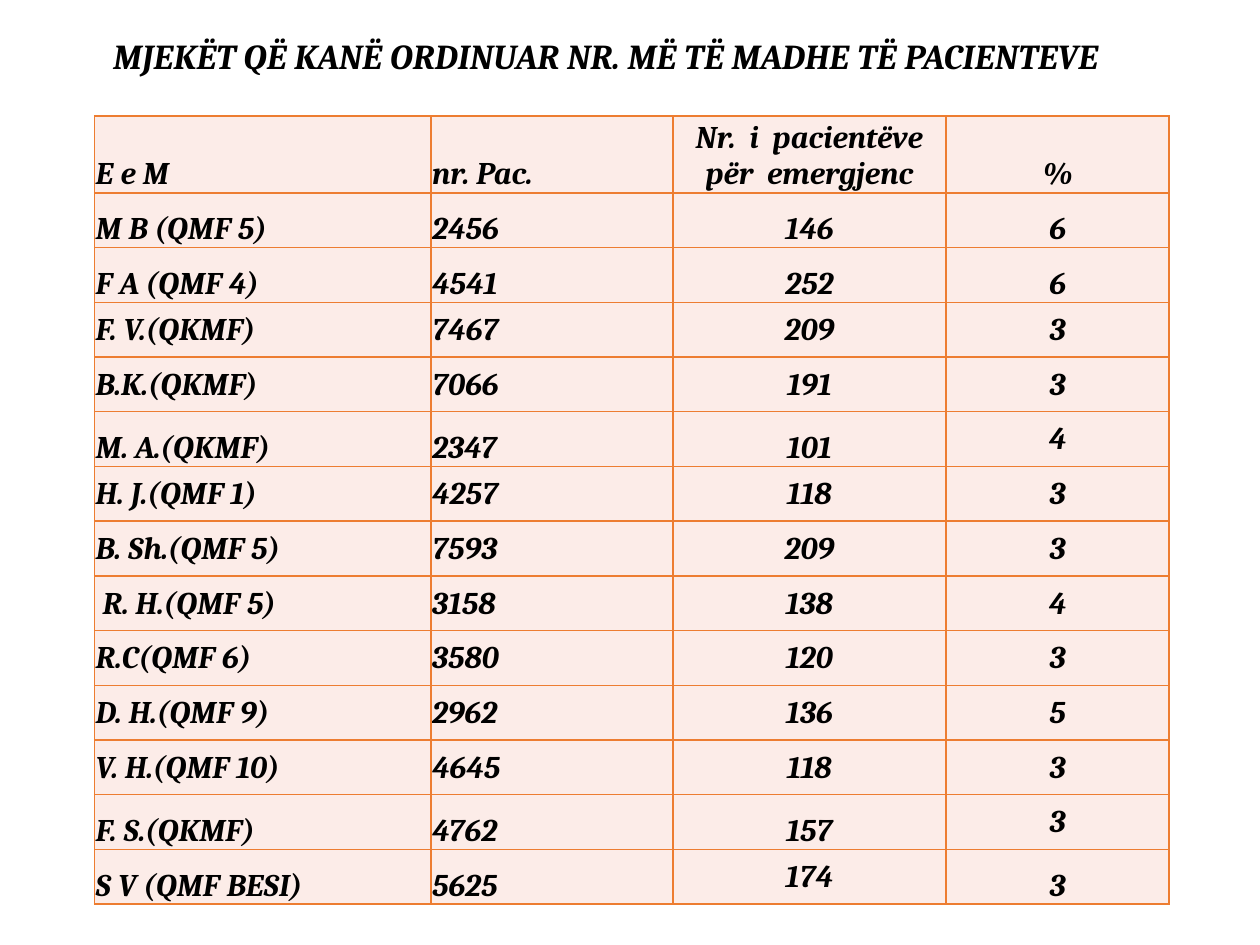
from typing import NamedTuple

from lxml.etree import SubElement
from pptx import Presentation
from pptx.dml.color import RGBColor
from pptx.enum.text import MSO_ANCHOR, PP_ALIGN
from pptx.oxml.ns import qn
from pptx.slide import Slide
from pptx.table import _Cell
from pptx.text.text import TextFrame
from pptx.util import Inches, Pt

FONT = "Cambria"
BLACK = RGBColor(0x00, 0x00, 0x00)
ORANGE = RGBColor(0xED, 0x7D, 0x31)
BLUSH = RGBColor(0xFC, 0xEC, 0xE8)

TITLE = "MJEKËT QË KANË ORDINUAR NR. MË TË MADHE TË PACIENTEVE"
COLUMN_WIDTHS = (2.67, 1.92, 2.17, 1.77)
COLUMN_ALIGNMENTS = (PP_ALIGN.LEFT, PP_ALIGN.LEFT, PP_ALIGN.CENTER, PP_ALIGN.CENTER)
TABLE_HEIGHT = 6.24
HEADER_HEIGHT = 0.59
ANCHORS = {"b": MSO_ANCHOR.BOTTOM, "m": MSO_ANCHOR.MIDDLE}


class Doctor(NamedTuple):
    """One doctor's figures, with one anchor letter per column."""

    name: str
    patients: str
    emergencies: str
    percent: str
    anchors: str = "mmmm"


HEADINGS = Doctor("E e M", "nr. Pac.", "Nr.  i  pacientëve për  emergjenc", "%", "bbbb")
DOCTORS = (
    Doctor("M B (QMF 5)", "2456", "146", "6", "bbbb"),
    Doctor("F A (QMF 4)", "4541", "252", "6", "bbbb"),
    Doctor("F. V.(QKMF)", "7467", "209", "3"),
    Doctor("B.K.(QKMF)", "7066", "191", "3"),
    Doctor("M. A.(QKMF)", "2347", "101", "4", "bbbm"),
    Doctor("H. J.(QMF 1)", "4257", "118", "3"),
    Doctor("B. Sh.(QMF 5)", "7593", "209", "3"),
    Doctor(" R. H.(QMF 5)", "3158", "138", "4"),
    Doctor("R.C(QMF 6)", "3580", "120", "3"),
    Doctor("D. H.(QMF 9)", "2962", "136", "5"),
    Doctor("V. H.(QMF 10)", "4645", "118", "3"),
    Doctor("F. S.(QKMF)", "4762", "157", "3", "bbbm"),
    Doctor("S V (QMF BESI)", "5625", "174", "3", "bbmb"),
)


def write(frame: TextFrame, text: str, size: int, alignment: PP_ALIGN) -> None:
    """Fill a text frame with one bold italic paragraph."""
    frame.text = text
    paragraph = frame.paragraphs[0]
    paragraph.alignment = alignment
    font = paragraph.runs[0].font
    font.name, font.size = FONT, Pt(size)
    font.bold = font.italic = True
    font.color.rgb = BLACK


def style_cell(cell: _Cell, anchor: MSO_ANCHOR) -> None:
    """Set the margins, borders and fill of a cell."""
    cell.vertical_anchor = anchor
    cell.margin_left = cell.margin_right = cell.margin_top = Inches(0.01)
    cell.margin_bottom = 0
    properties = cell._tc.get_or_add_tcPr()
    for side in ("a:lnL", "a:lnR", "a:lnT", "a:lnB"):
        border = SubElement(properties, qn(side), w=str(Pt(1)))
        border_fill = SubElement(border, qn("a:solidFill"))
        SubElement(border_fill, qn("a:srgbClr"), val=str(ORANGE))
    cell.fill.solid()
    cell.fill.fore_color.rgb = BLUSH


def add_title(slide: Slide) -> None:
    """Place the centred heading."""
    title = slide.shapes.add_textbox(Inches(0.5), Inches(0), Inches(8.62), Inches(0.92))
    frame = title.text_frame
    frame.word_wrap = True
    frame.vertical_anchor = MSO_ANCHOR.MIDDLE
    write(frame, TITLE, 20, PP_ALIGN.CENTER)
    frame.paragraphs[0].line_spacing = 0.9


def add_doctor_table(slide: Slide) -> None:
    """Place the table with its headings and one row per doctor."""
    rows = (HEADINGS, *DOCTORS)
    table = slide.shapes.add_table(
        len(rows), len(COLUMN_WIDTHS), Inches(0.75), Inches(0.92),
        Inches(sum(COLUMN_WIDTHS)), Inches(TABLE_HEIGHT),
    ).table
    table.first_row = table.horz_banding = False
    for column, width in zip(table.columns, COLUMN_WIDTHS):
        column.width = Inches(width)
    doctor_height = (TABLE_HEIGHT - HEADER_HEIGHT) / len(DOCTORS)
    for row_index, doctor in enumerate(rows):
        table.rows[row_index].height = Inches(doctor_height if row_index else HEADER_HEIGHT)
        values = doctor[:len(COLUMN_WIDTHS)]
        parts = zip(values, doctor.anchors, COLUMN_ALIGNMENTS)
        for column_index, (value, anchor, alignment) in enumerate(parts):
            cell = table.cell(row_index, column_index)
            write(cell.text_frame, value, 18, alignment)
            style_cell(cell, ANCHORS[anchor])


def main() -> None:
    """Build and save the presentation."""
    presentation = Presentation()
    presentation.slide_width, presentation.slide_height = Inches(10), Inches(7.5)
    slide = presentation.slides.add_slide(presentation.slide_layouts[6])
    add_title(slide)
    add_doctor_table(slide)
    presentation.save("out.pptx")


if __name__ == "__main__":
    main()
